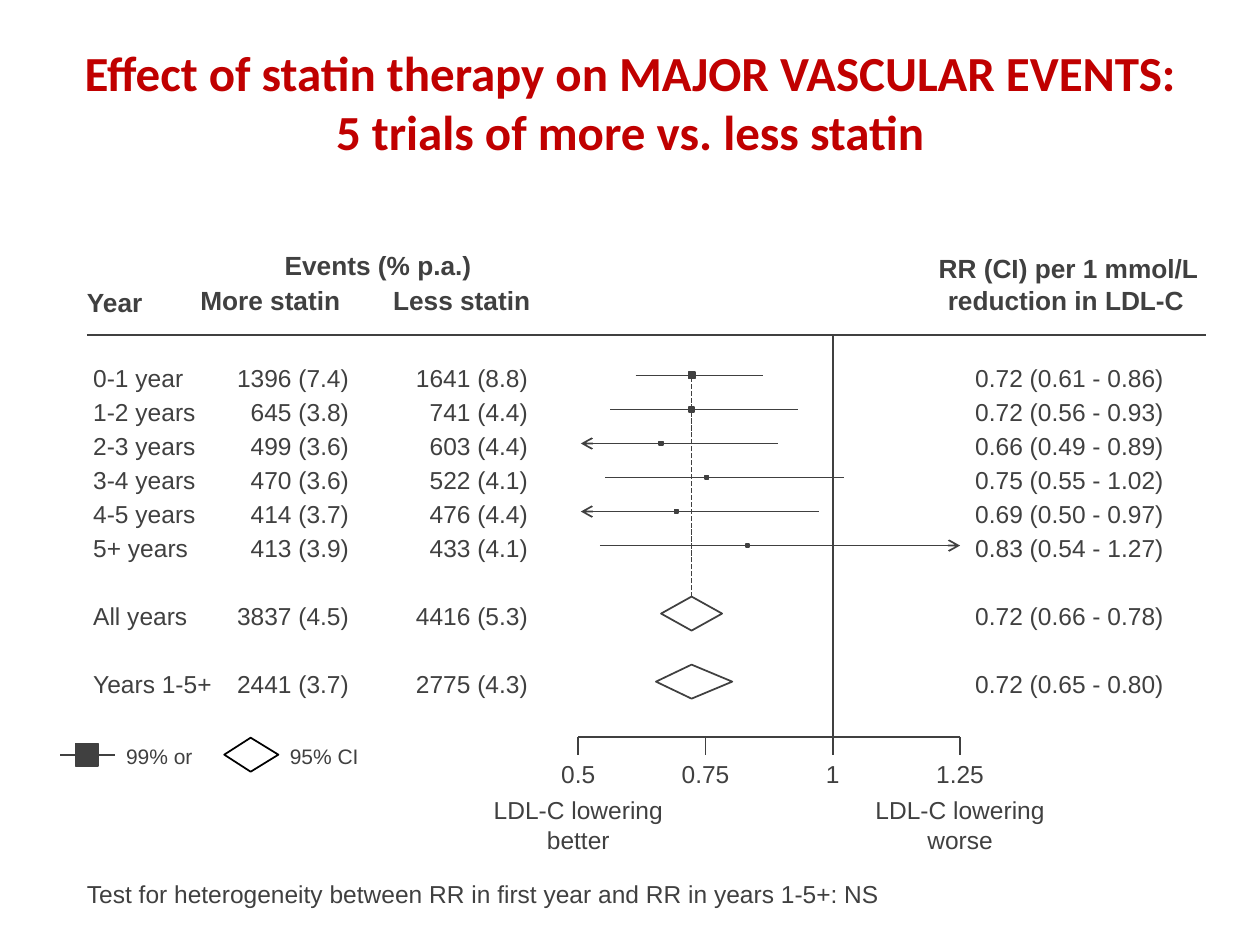
from lxml.etree import SubElement
from pptx import Presentation
from pptx.dml.color import RGBColor
from pptx.enum.dml import MSO_LINE
from pptx.enum.shapes import MSO_CONNECTOR, MSO_SHAPE
from pptx.enum.text import MSO_ANCHOR, MSO_AUTO_SIZE, PP_ALIGN
from pptx.oxml.ns import qn
from pptx.util import Inches, Pt

TITLE = "Effect of statin therapy on MAJOR VASCULAR EVENTS:\n5 trials of more vs. less statin"
INK, RED, BLACK, WHITE = "404040", "C00000", "000000", "FFFFFF"
LEFT, CENTER, RIGHT = PP_ALIGN.LEFT, PP_ALIGN.CENTER, PP_ALIGN.RIGHT

# slot, label, more statin, less statin, ratio, low, high, marker size
YEARS = [
    (0, "0-1 year", "1396 (7.4)", "1641 (8.8)", 0.72, 0.61, 0.86, 0.05),
    (1, "1-2 years", "645 (3.8)", "741 (4.4)", 0.72, 0.56, 0.93, 0.04),
    (2, "2-3 years", "499 (3.6)", "603 (4.4)", 0.66, 0.49, 0.89, 0.03),
    (3, "3-4 years", "470 (3.6)", "522 (4.1)", 0.75, 0.55, 1.02, 0.03),
    (4, "4-5 years", "414 (3.7)", "476 (4.4)", 0.69, 0.50, 0.97, 0.03),
    (5, "5+ years", "413 (3.9)", "433 (4.1)", 0.83, 0.54, 1.27, 0.02),
    (7, "All years", "3837 (4.5)", "4416 (5.3)", 0.72, 0.66, 0.78, None),
    (9, "Years 1-5+", "2441 (3.7)", "2775 (4.3)", 0.72, 0.65, 0.80, None),
]
HEADERS = [
    ("Year", 0.69, 2.27, 0.6, LEFT),
    ("More statin", 1.59, 2.26, 1.2, LEFT),
    ("Less statin", 3.12, 2.26, 1.2, LEFT),
    ("Events (% p.a.)", 2.26, 1.98, 1.6, LEFT),
    ("RR (CI) per 1 mmol/L", 7.38, 2.0, 2.2, CENTER),
    ("reduction in LDL-C", 7.36, 2.26, 2.2, CENTER),
]
TICKS = [("0.5", 0.5), ("0.75", 0.75), ("1", 1), ("1.25", 1.25)]
DIRECTIONS = [("better", 0.5), ("worse", 1.25)]
FOOTNOTE = "Test for heterogeneity between RR in first year and RR in years 1-5+: NS"

AXIS_LEFT, AXIS_Y, UNIT = 4.59, 5.85, 4.04
HEADER_RULE, FIRST_ROW, ROW_STEP = 2.66, 2.98, 0.27
PLOT_SHIFT, TICK_LENGTH = 0.01, 0.14


def color(value):
    """Turn a hex string into a colour."""
    return RGBColor.from_string(value)


def axis_x(value):
    """Give the horizontal place of a ratio on the axis."""
    return AXIS_LEFT + (value - 0.5) * UNIT


def add_text(page, text, left, top, width, align=LEFT, size=14, bold=False):
    """Place one line of text in a box without margins."""
    box = page.shapes.add_textbox(Inches(left), Inches(top), Inches(width), Inches(size * 0.017))
    frame = box.text_frame
    frame.word_wrap = True
    frame.margin_left = frame.margin_right = frame.margin_top = frame.margin_bottom = 0
    frame.text = text
    para = frame.paragraphs[0]
    para.alignment = align
    para.font.name, para.font.size, para.font.bold = "Arial", Pt(size), bold
    para.font.color.rgb = color(INK)


def add_line(page, x1, y1, x2, y2, heads=()):
    """Draw a thin straight line, with open arrowheads where asked."""
    line = page.shapes.add_connector(
        MSO_CONNECTOR.STRAIGHT, Inches(x1), Inches(y1), Inches(x2), Inches(y2))
    line.line.color.rgb = color(INK)
    line.line.width = Pt(1)
    for head in heads:
        SubElement(line.line._get_or_add_ln(), qn(head), type="arrow")
    SubElement(line._element.spPr, qn("a:effectLst"))
    return line


def add_square(page, x, y, size):
    """Draw a filled square centred on a point."""
    square = page.shapes.add_shape(
        MSO_SHAPE.RECTANGLE, Inches(x - size / 2), Inches(y - size / 2), Inches(size), Inches(size))
    square.shadow.inherit = False
    square.fill.solid()
    square.fill.fore_color.rgb = square.line.color.rgb = color(INK)
    square.line.width = Pt(1)


def add_diamond(page, left, middle, right, y, outline):
    """Draw a diamond whose tips mark an interval and its estimate."""
    points = [(left, y), (middle, y + 0.135), (right, y)]
    builder = page.shapes.build_freeform(Inches(middle), Inches(y - 0.135))
    builder.add_line_segments([(Inches(px), Inches(py)) for px, py in points], close=True)
    diamond = builder.convert_to_shape()
    diamond.shadow.inherit = False
    diamond.fill.solid()
    diamond.fill.fore_color.rgb = color(WHITE)
    diamond.line.color.rgb = color(outline)
    diamond.line.width = Pt(1)


def add_title(page):
    """Format the title placeholder."""
    title = page.shapes.title
    title.left, title.top, title.width, title.height = map(Inches, (0, 0.31, 10, 0.99))
    frame = title.text_frame
    frame.text = TITLE
    frame.auto_size = MSO_AUTO_SIZE.NONE
    frame.vertical_anchor = MSO_ANCHOR.MIDDLE
    for para in frame.paragraphs:
        para.alignment = CENTER
        para.font.name, para.font.size, para.font.bold = "Calibri", Pt(28), True
        para.font.color.rgb = color(RED)


def add_axis(page):
    """Draw the rules, the ticks and the axis captions."""
    add_line(page, 0.69, HEADER_RULE, 9.57, HEADER_RULE)
    add_line(page, axis_x(1), AXIS_Y, axis_x(1), HEADER_RULE)
    add_line(page, axis_x(0.5), AXIS_Y, axis_x(1.25), AXIS_Y)
    for label, value in TICKS:
        x = axis_x(value)
        add_line(page, x, AXIS_Y, x, AXIS_Y + TICK_LENGTH)
        add_text(page, label, x - 0.3, 6.02, 0.6, CENTER)
    for word, value in DIRECTIONS:
        for text, top in (("LDL-C lowering", 6.31), (word, 6.55)):
            add_text(page, text, axis_x(value) - 0.8, top, 1.6, CENTER)


def add_row(page, slot, label, more, less, ratio, low, high, marker):
    """Write one row of figures and plot its interval."""
    y = FIRST_ROW + slot * ROW_STEP
    top = y - 0.1
    add_text(page, label, 0.74, top, 1.1)
    add_text(page, more, 1.77, top, 1.0, RIGHT)
    add_text(page, less, 3.19, top, 1.0, RIGHT)
    add_text(page, f"{ratio:.2f} ({low:.2f} - {high:.2f})", 7.74, top, 1.6)
    left, middle, right = (axis_x(value) + PLOT_SHIFT for value in (low, ratio, high))
    if marker is None:
        add_diamond(page, left, middle, right, y, INK)
        return
    heads = []
    if low <= 0.5:
        left = axis_x(0.5) + 0.02
        heads.append("a:headEnd")
    if high > 1.25:
        right = axis_x(1.25)
        heads.append("a:tailEnd")
    add_square(page, middle, y, marker)
    add_line(page, left, y, right, y, heads)


def add_legend(page):
    """Explain the square and the diamond."""
    y = AXIS_Y + TICK_LENGTH
    add_square(page, 0.69, y, 0.18)
    add_line(page, 0.48, y, 0.91, y)
    add_text(page, "99% or", 1.0, 5.9, 0.65, size=12)
    add_diamond(page, 1.78, 1.99, 2.21, y, BLACK)
    add_text(page, "95% CI", 2.3, 5.9, 0.65, size=12)


def main():
    """Build the slide and save it."""
    deck = Presentation()
    deck.slide_width, deck.slide_height = Inches(10), Inches(7.5)
    page = deck.slides.add_slide(deck.slide_layouts[5])
    add_title(page)
    for text, left, top, width, align in HEADERS:
        add_text(page, text, left, top, width, align, 15, True)
    add_axis(page)
    for row in YEARS:
        add_row(page, *row)
    x = axis_x(0.72) + PLOT_SHIFT
    overall = add_line(page, x, FIRST_ROW + 7 * ROW_STEP - 0.13, x, FIRST_ROW)
    overall.line.dash_style = MSO_LINE.SQUARE_DOT
    add_legend(page)
    add_text(page, FOOTNOTE, 0.69, 6.98, 7)
    deck.save("out.pptx")


if __name__ == "__main__":
    main()
